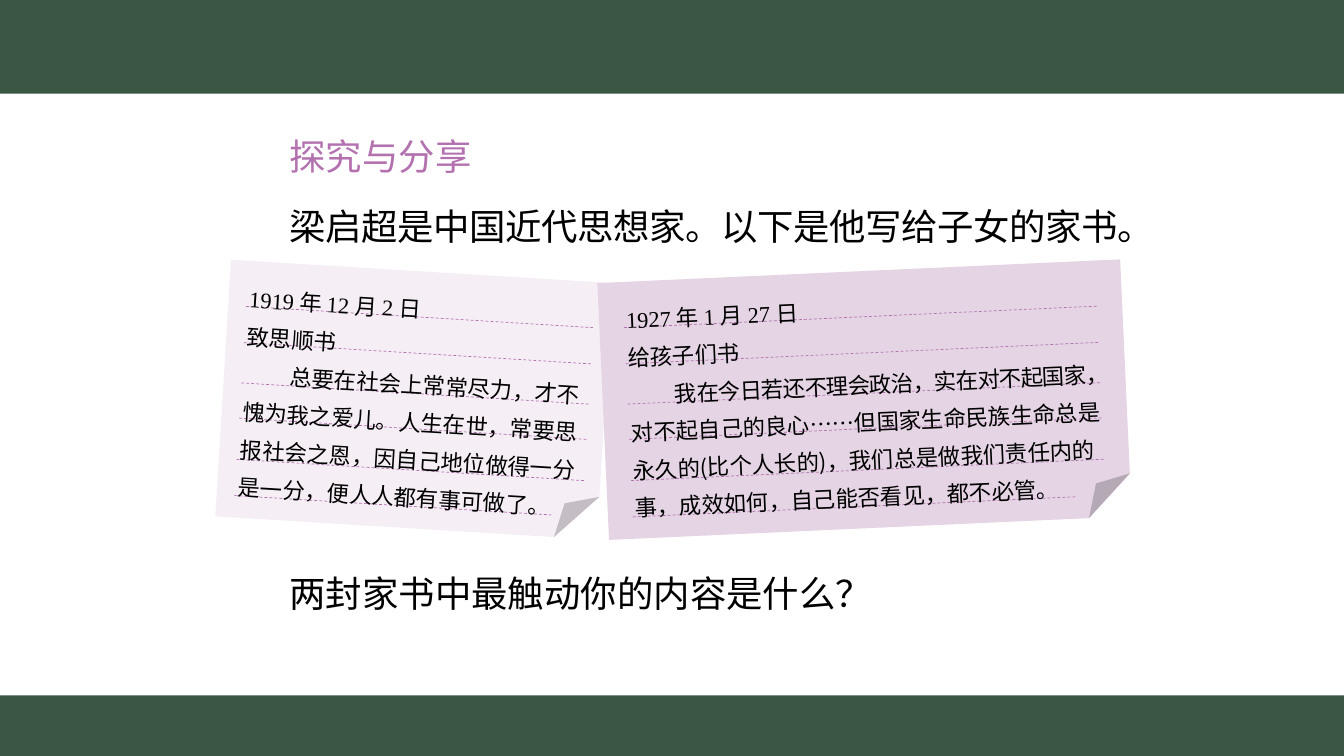
from math import cos, radians, sin

from lxml import etree
from pptx import Presentation
from pptx.dml.color import RGBColor
from pptx.enum.dml import MSO_LINE_DASH_STYLE as Dash
from pptx.enum.shapes import MSO_CONNECTOR as Connector, MSO_SHAPE as Shape
from pptx.oxml.ns import qn
from pptx.util import Inches, Pt

# Content: a paragraph is a list of (text, format) runs
SANS, SERIF = "Noto Sans CJK SC", "Times New Roman"
GREEN, PURPLE, BLACK = "3B5643", "B371AF", "000000"
BANDS = [(0, 0.93), (6.9, 0.6)]  # top, height
BODY = {
    "box": (2.05, 1.02, 11.28, 5.1), "font": SANS, "size": 26, "pitch": 50,
    "indented": (0, 1, 2), "space_before": {2: 212},
    "paragraphs": [
        [("探究与分享", {"color": PURPLE})],
        [("梁启超是中国近代思想家。以下是他写给子女的家书。", {"spacing": -0.3})],
        [("两封家书中最触动你的内容是什么？", {})],
    ],
}
LETTER = {"font": SERIF, "size": 16, "pitch": 26.9, "indented": (2,)}
LETTERS = [
    {
        **LETTER, "note": (2.21, 2.69, 3.79, 2.55), "fill": "F5EEF5", "angle": 3.5,
        "rule_start": (2.44, 3.04), "rule_lengths": [3.45] * 5 + [3.15],
        "box": (2.32, 2.78, 3.68, 2.31),
        "paragraphs": [
            [("1919 年 12 月 2 日", {})],
            [("致思顺书", {})],
            [("总要在社会上常常尽力，才不", {})],
            [("愧为我之爱儿。人生在世，常要思", {})],
            [("报社会之恩，因自己地位做得一分", {})],
            [("是一分，便人人都有事可做了。", {})],
        ],
    },
    {
        **LETTER, "note": (5.98, 2.69, 5.19, 2.55), "fill": "E4D4E4", "angle": -2.6,
        "rule_start": (6.19, 3.25), "rule_lengths": [4.71] * 5 + [4.4],
        "box": (6.15, 2.77, 5.2, 2.35),
        "paragraphs": [
            [("1927 年 1 月 27 日", {})],
            [("给孩子们书", {})],
            [("我", {}), ("在今日若还不理会政治，实在对不起国家", {"spacing": -0.5}), ("，", {})],
            [("对不起自己的良心", {}), ("……", {"font": SANS}), ("但国家生命民族生命总是", {})],
            [("永久的", {}), ("(", {"font": SANS}), ("比个人长的", {}),
             (")", {"font": SANS}), ("，我们总是做我们责任内的", {})],
            [("事，成效如何，自己能否看见，都不必管。", {})],
        ],
    },
]
RULE_OFFSETS = [0, 0.36, 0.76, 1.11, 1.52, 1.88]  # distance down the note


def color(value):
    return RGBColor.from_string(value)


def add_filled(kind, box, fill, angle=0):
    shape = slide.shapes.add_shape(kind, *map(Inches, box))
    shape.shadow.inherit = False
    shape.fill.solid()
    shape.fill.fore_color.rgb = color(fill)
    shape.line.fill.background()
    shape.rotation = angle


def add_rule(start, end):
    rule = slide.shapes.add_connector(Connector.STRAIGHT, *map(Inches, start + end))
    rule.line.color.rgb = color(PURPLE)
    rule.line.width = Pt(0.5)
    rule.line.dash_style = Dash.DASH
    etree.SubElement(rule._element.spPr, qn("a:effectLst"))


def add_run(paragraph, text, style):
    run = paragraph.add_run()
    run.text = text
    for name, value in {"name": style["font"], "size": Pt(style["size"])}.items():
        setattr(run.font, name, value)
    run.font.color.rgb = color(style.get("color", BLACK))
    properties = run._r.get_or_add_rPr()
    etree.SubElement(properties, qn("a:ea")).set("typeface", SANS)
    if "spacing" in style:
        properties.set("spc", str(round(style["spacing"] * 100)))


def add_text(block):
    shape = slide.shapes.add_textbox(*map(Inches, block["box"]))
    shape.rotation = block.get("angle", 0)
    frame = shape.text_frame
    frame.word_wrap = True
    for index, runs in enumerate(block["paragraphs"]):
        paragraph = frame.add_paragraph() if index else frame.paragraphs[0]
        paragraph.line_spacing = Pt(block["pitch"])
        paragraph.space_before = Pt(block.get("space_before", {}).get(index, 0))
        if index in block["indented"]:  # two characters
            paragraph._p.get_or_add_pPr().set("indent", str(Pt(2 * block["size"])))
        for text, changes in runs:
            add_run(paragraph, text, {"font": block["font"], "size": block["size"], **changes})


presentation = Presentation()
presentation.slide_width, presentation.slide_height = Inches(13.33), Inches(7.5)
slide = presentation.slides.add_slide(presentation.slide_layouts[6])

# Bands and body text
for top, height in BANDS:
    add_filled(Shape.RECTANGLE, (0, top, 13.33, height), GREEN)
add_text(BODY)

# Tilted letters with ruled lines
for letter in LETTERS:
    add_filled(Shape.FOLDED_CORNER, letter["note"], letter["fill"], letter["angle"])
    across, down = cos(radians(letter["angle"])), sin(radians(letter["angle"]))
    left, top = letter["rule_start"]
    for offset, length in zip(RULE_OFFSETS, letter["rule_lengths"]):
        x, y = left - offset * down, top + offset * across
        add_rule((x, y), (x + length * across, y + length * down))
    add_text(letter)

presentation.save("out.pptx")
